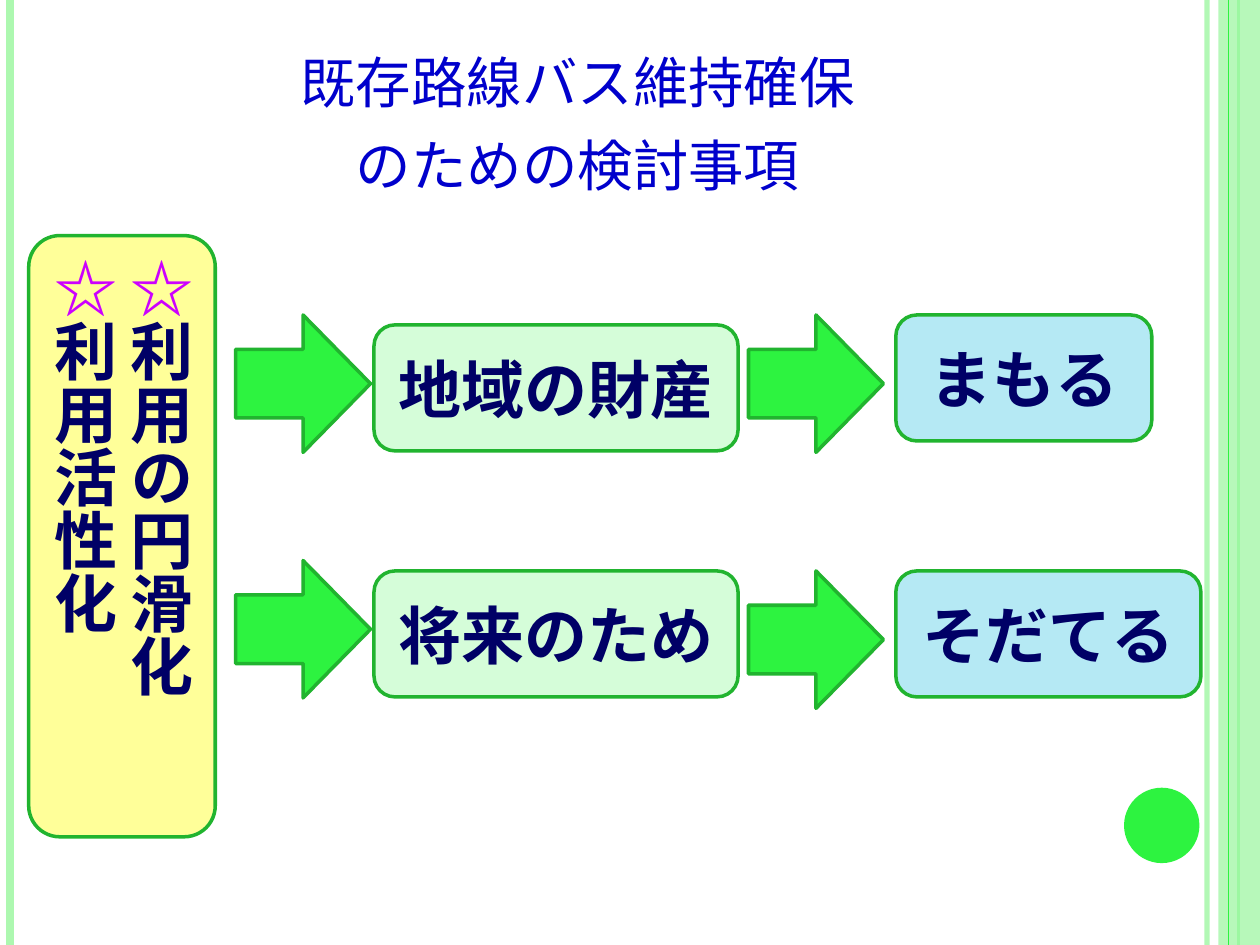
from lxml import etree
from pptx import Presentation
from pptx import util as u
from pptx.dml.color import RGBColor
from pptx.enum import shapes, text
from pptx.oxml.ns import qn

FONT = "Noto Sans CJK JP"
GREEN, DARK_GREEN, PALE_GREEN = "2DF340", "21B42F", "ADF8B0"
NAVY, MAGENTA = "000066", "CC00FF"


def set_color(fmt, color, alpha=None):
    fmt.solid()
    fmt.fore_color.rgb = RGBColor.from_string(color)
    if alpha is not None:
        clr = fmt._xPr.find(qn("a:solidFill"))[0]
        etree.SubElement(clr, qn("a:alpha")).set("val", str(alpha * 1000))


def add_line(s, x, color, width, alpha=None):
    c = s.shapes.add_connector(shapes.MSO_CONNECTOR.STRAIGHT, u.Cm(x), 0, u.Cm(x), u.Cm(19.05))
    c.line.width = u.Pt(width)
    set_color(c.line.fill, color, alpha)
    etree.SubElement(c._element.spPr, qn("a:effectLst"))


def add_shape(s, kind, x, y, w, h, fill, line=None, alpha=None):
    sp = s.shapes.add_shape(kind, u.Cm(x), u.Cm(y), u.Cm(w), u.Cm(h))
    sp.shadow.inherit = False
    set_color(sp.fill, fill, alpha)
    if line:
        set_color(sp.line.fill, line)
        sp.line.width = u.Pt(2)
    else:
        sp.line.fill.background()
    return sp


def add_run(p, content, size=36, color=NAVY, bold=True, small_caps=False):
    r = p.add_run()
    r.text = content
    r.font.size, r.font.bold, r.font.name = u.Pt(size), bold, FONT
    set_color(r.font.fill, color)
    rPr = r.font._element
    etree.SubElement(rPr, qn("a:ea")).set("typeface", FONT)
    if small_caps:
        rPr.set("cap", "small")


def add_title(s, lines):
    sp = s.shapes.add_textbox(u.Cm(1.27), u.Cm(0.76), u.Cm(20.75), u.Cm(3.4))
    tf = sp.text_frame
    tf.word_wrap = True
    tf.vertical_anchor = text.MSO_ANCHOR.BOTTOM
    p = tf.paragraphs[0]
    p.alignment = text.PP_ALIGN.CENTER
    for i, line in enumerate(lines):
        if i:
            p.add_line_break()
        add_run(p, line, size=39.6, color="0000CC", bold=False, small_caps=True)


def add_box(s, x, y, w, fill, content):
    sp = add_shape(s, shapes.MSO_SHAPE.ROUNDED_RECTANGLE, x, y, w, 2.54, fill, DARK_GREEN)
    tf = sp.text_frame
    tf.word_wrap = False
    tf.vertical_anchor = text.MSO_ANCHOR.MIDDLE
    p = tf.paragraphs[0]
    p.alignment = text.PP_ALIGN.CENTER
    add_run(p, content)


def add_vertical_box(s, items):
    sp = add_shape(s, shapes.MSO_SHAPE.ROUNDED_RECTANGLE, 0.58, 4.75, 3.76, 12.12, "FFFF99", DARK_GREEN)
    tf = sp.text_frame
    tf.word_wrap = True
    tf.vertical_anchor = text.MSO_ANCHOR.MIDDLE
    tf._txBody.bodyPr.set("vert", "eaVert")
    for i, item in enumerate(items):
        p = tf.add_paragraph() if i else tf.paragraphs[0]
        p.alignment = text.PP_ALIGN.LEFT
        add_run(p, "☆", color=MAGENTA)
        add_run(p, item)


def add_arrow(s, x, y):
    add_shape(s, shapes.MSO_SHAPE.RIGHT_ARROW, x, y, 2.72, 2.77, GREEN, DARK_GREEN)


def add_frame(s):
    add_line(s, 24.33, PALE_GREEN, 3, alpha=93)
    add_line(s, 0.2, PALE_GREEN, 4.5)
    add_line(s, 24.97, GREEN, 1.5)
    add_shape(s, shapes.MSO_SHAPE.RECTANGLE, 24.56, 0, 0.84, 19.05, PALE_GREEN, alpha=87)
    add_line(s, 24.77, GREEN, 0.75)
    add_shape(s, shapes.MSO_SHAPE.OVAL, 22.66, 15.88, 1.52, 1.52, GREEN)


def main():
    prs = Presentation()
    prs.slide_width, prs.slide_height = u.Cm(25.4), u.Cm(19.05)
    s = prs.slides.add_slide(prs.slide_layouts[6])
    add_frame(s)
    add_title(s, ["既存路線バス維持確保", "のための検討事項"])
    add_vertical_box(s, ["利用の円滑化", "利用活性化"])
    rows = [
        (6.35, 6.55, "地域の財産", 6.35, "まもる", 5.16),
        (11.3, 11.51, "将来のため", 11.51, "そだてる", 6.15),
    ]
    for arrow_y, reason_y, reason, goal_y, goal, goal_w in rows:
        add_arrow(s, 4.75, arrow_y)
        add_box(s, 7.54, reason_y, 7.34, "D5FDD9", reason)
        add_arrow(s, 15.09, goal_y)
        add_box(s, 18.06, goal_y, goal_w, "B5E9F4", goal)
    prs.save("out.pptx")


if __name__ == "__main__":
    main()
